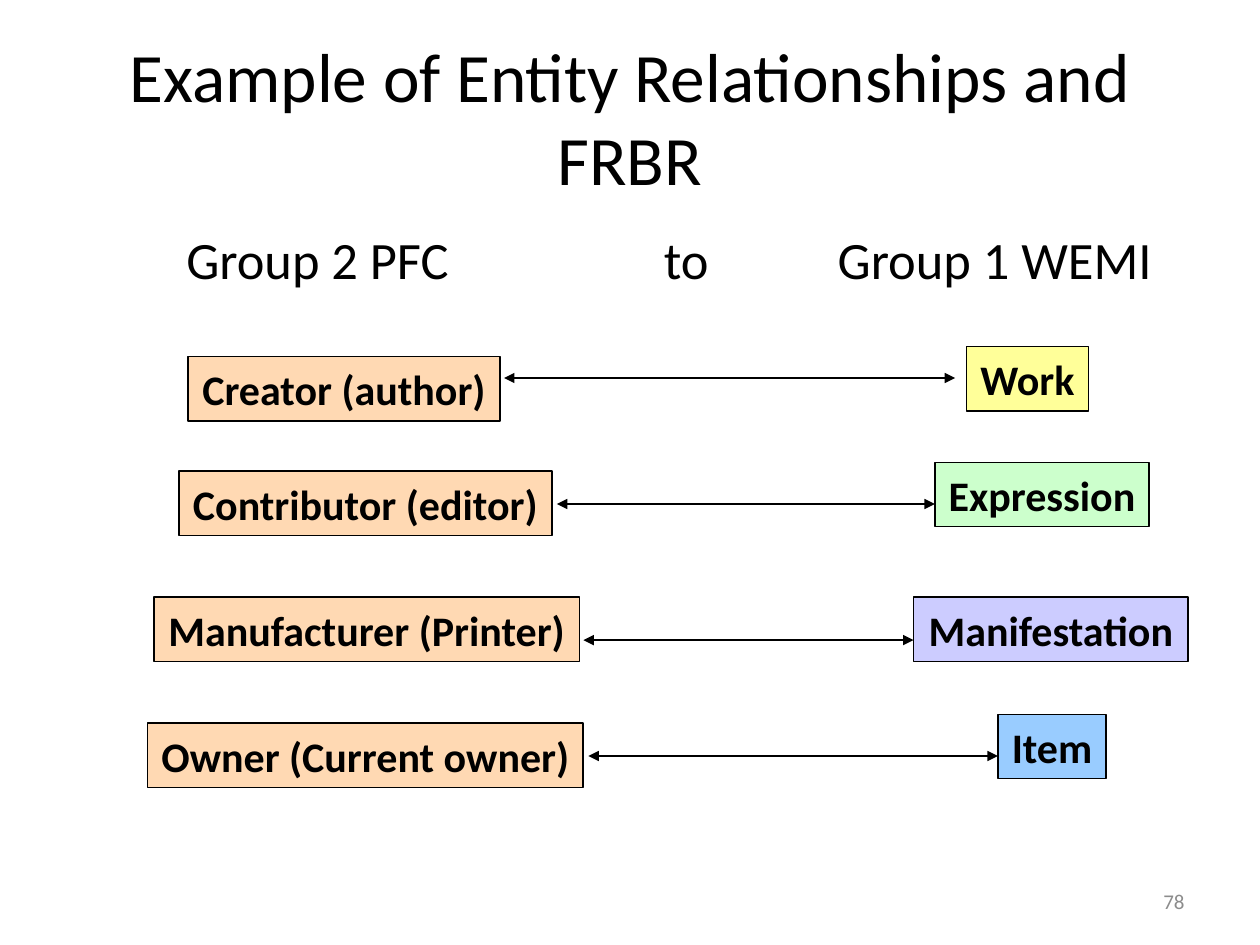
from dataclasses import dataclass

from lxml.etree import SubElement
from pptx import Presentation
from pptx.dml.color import RGBColor
from pptx.enum.shapes import MSO_CONNECTOR, MSO_SHAPE
from pptx.enum.text import MSO_ANCHOR, MSO_AUTO_SIZE, PP_ALIGN
from pptx.oxml.ns import qn
from pptx.util import Emu, Pt

PX = 9144  # EMU in one px, 100 px to the inch


@dataclass(frozen=True)
class Theme:
    font: str = "Calibri"
    ink: str = "000000"
    muted: str = "8C8C8C"
    agent: str = "FFD9B3"
    work: str = "FFFF99"
    expression: str = "CCFFCC"
    manifestation: str = "CCCCFF"
    item: str = "99CCFF"
    title_size: float = 39.6
    heading_size: float = 30
    box_size: float = 24
    number_size: float = 12


THEME = Theme()
BOX_HEIGHT = 51

# Agent (name, left, top, width), entity (name, left, top, width, fill),
# arrow (left, right, y)
RELATIONSHIPS = [
    (("Creator (author)", 149, 283, 248),
     ("Work", 767, 275, 97, THEME.work), (400, 758, 300)),
    (("Contributor (editor)", 142, 374, 296),
     ("Expression", 742, 367, 170, THEME.expression), (442, 742, 400)),
    (("Manufacturer (Printer)", 122, 474, 338),
     ("Manifestation", 725, 474, 218, THEME.manifestation), (463, 725, 508)),
    (("Owner (Current owner)", 117, 574, 346),
     ("Item", 792, 567, 86, THEME.item), (467, 792, 600)),
]


def px(*lengths):
    return [Emu(length * PX) for length in lengths]


def color(code):
    return RGBColor.from_string(code)


def write(frame, text, size, ink=THEME.ink, align=PP_ALIGN.LEFT, bold=False):
    paragraph = frame.paragraphs[0]
    paragraph.alignment = align
    run = paragraph.add_run()
    run.text = text
    run.font.name = THEME.font
    run.font.size = Pt(size)
    run.font.bold = bold
    run.font.color.rgb = color(ink)
    return paragraph


def add_text(slide, box, text, size, anchor=MSO_ANCHOR.MIDDLE, **style):
    frame = slide.shapes.add_textbox(*px(*box)).text_frame
    frame.word_wrap = True
    frame.vertical_anchor = anchor
    return write(frame, text, size, **style)


def add_headings(slide, box, headings, tab_stops):
    text = "".join("\t" + heading for heading in headings)
    paragraph = add_text(slide, box, text, THEME.heading_size, MSO_ANCHOR.TOP)
    properties = paragraph._p.get_or_add_pPr()
    tab_list = SubElement(properties, qn("a:tabLst"))
    for stop in px(*tab_stops):
        SubElement(tab_list, qn("a:tab"), pos=str(stop), algn="l")


def add_box(slide, name, left, top, width, fill=THEME.agent):
    shape = slide.shapes.add_shape(
        MSO_SHAPE.RECTANGLE, *px(left, top, width, BOX_HEIGHT))
    shape.shadow.inherit = False
    shape.fill.solid()
    shape.fill.fore_color.rgb = color(fill)
    shape.line.color.rgb = color(THEME.ink)
    shape.line.width = Pt(1)
    frame = shape.text_frame
    frame.word_wrap = False
    frame.auto_size = MSO_AUTO_SIZE.SHAPE_TO_FIT_TEXT
    write(frame, name, THEME.box_size, align=PP_ALIGN.CENTER, bold=True)


def add_double_arrow(slide, left, right, y):
    connector = slide.shapes.add_connector(
        MSO_CONNECTOR.STRAIGHT, *px(left, y, right, y))
    connector.line.color.rgb = color(THEME.ink)
    connector.line.width = Pt(0.75)
    line = connector.line._get_or_add_ln()
    for end in ("a:headEnd", "a:tailEnd"):
        SubElement(line, qn(end), type="triangle")
    SubElement(connector._element.spPr, qn("a:effectLst"))


def main():
    presentation = Presentation()
    presentation.slide_width, presentation.slide_height = px(1000, 750)
    slide = presentation.slides.add_slide(presentation.slide_layouts[6])

    # Title and column headings
    add_text(slide, (50, 30, 900, 125),
             "Example of Entity Relationships and FRBR",
             THEME.title_size, align=PP_ALIGN.CENTER)
    add_headings(slide, (8, 175, 928, 495),
                 ["Group 2 PFC", "to", "Group 1 WEMI"], [130, 509, 647])

    # Agents linked to the entities they relate to
    for agent, entity, arrow in RELATIONSHIPS:
        add_box(slide, *agent)
        add_box(slide, *entity)
        add_double_arrow(slide, *arrow)

    # Slide number
    add_text(slide, (717, 695, 233, 40), "78", THEME.number_size,
             ink=THEME.muted, align=PP_ALIGN.RIGHT)

    presentation.save("out.pptx")


if __name__ == "__main__":
    main()
